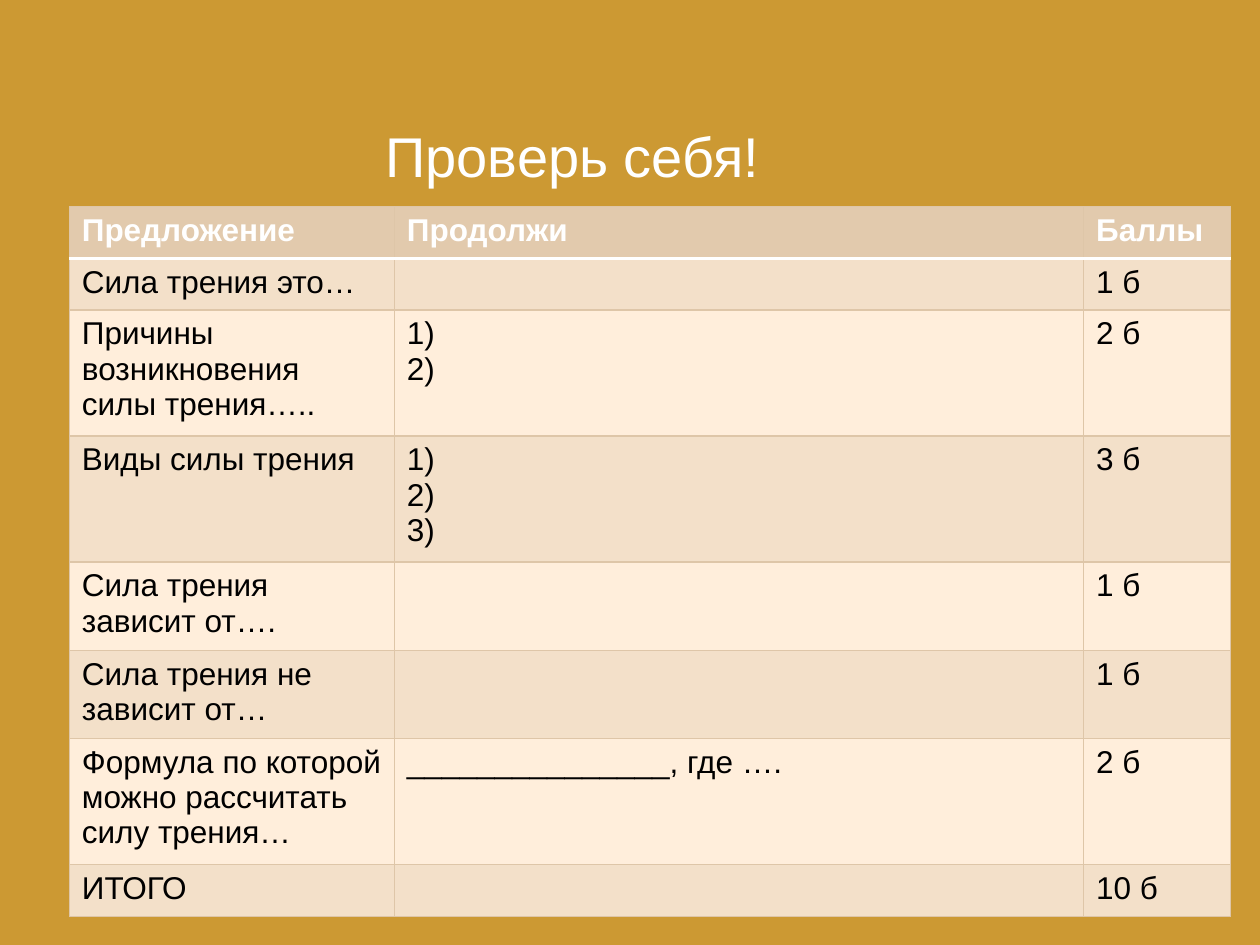
from dataclasses import dataclass

from lxml.etree import SubElement
from pptx import Presentation
from pptx.dml.color import RGBColor
from pptx.enum.text import MSO_ANCHOR
from pptx.oxml.ns import qn
from pptx.util import Inches, Pt

GOLD = RGBColor(0xCC, 0x99, 0x33)
WHITE = RGBColor(0xFF, 0xFF, 0xFF)
BLACK = RGBColor(0x00, 0x00, 0x00)
HEADER_TAN = RGBColor(0xE2, 0xCA, 0xAD)
BAND_TAN = RGBColor(0xF3, 0xE0, 0xC9)
CREAM = RGBColor(0xFF, 0xEE, 0xDB)
GRID_TAN = RGBColor(0xDE, 0xC6, 0xA8)
FONT = "Arial"
COLUMN_WIDTHS = (2.58, 5.47, 1.17)
ROW_HEIGHT = 0.41


@dataclass(frozen=True)
class Question:
    prompt: str
    answer: str
    points: str


HEADER = Question("Предложение", "Продолжи", "Баллы")
QUESTIONS = (
    Question("Сила трения это…", "", "1 б"),
    Question("Причины возникновения силы трения…..", "1)\n2)", "2 б"),
    Question("Виды силы трения", "1)\n2)\n3)", "3 б"),
    Question("Сила трения зависит от….", "", "1 б"),
    Question("Сила трения не зависит от…", "", "1 б"),
    Question("Формула по которой можно рассчитать силу трения…",
             "_______________, где ….", "2 б"),
    Question("ИТОГО", "", "10 б"),
)


def set_font(para, size: int, color: RGBColor, bold: bool = False) -> None:
    para.font.name = FONT
    para.font.size = Pt(size)
    para.font.bold = bold
    para.font.color.rgb = color


def add_border(cell, side: str, color: RGBColor, width: float) -> None:
    line = SubElement(cell._tc.get_or_add_tcPr(), qn(f"a:ln{side}"), w=str(Pt(width)))
    SubElement(SubElement(line, qn("a:solidFill")), qn("a:srgbClr"), val=str(color))


def fill_row(table, index: int, question: Question) -> None:
    is_header = index == 0
    fill = HEADER_TAN if is_header else BAND_TAN if index % 2 else CREAM
    white_side = {0: "B", 1: "T"}.get(index)
    texts = (question.prompt, question.answer, question.points)
    for column, text in enumerate(texts):
        cell = table.cell(index, column)
        for side in "LRTB":
            is_white = side == white_side
            add_border(cell, side, WHITE if is_white else GRID_TAN, 2 if is_white else 0.75)
        cell.fill.solid()
        cell.fill.fore_color.rgb = fill
        cell.text = text
        for para in cell.text_frame.paragraphs:
            set_font(para, 18, WHITE if is_header else BLACK, is_header)


def add_title(page, text: str) -> None:
    box = page.shapes.add_textbox(Inches(2.96), Inches(0.3), Inches(6.91), Inches(1.25))
    frame = box.text_frame
    frame.word_wrap = True
    frame.vertical_anchor = MSO_ANCHOR.BOTTOM
    frame.text = text
    set_font(frame.paragraphs[0], 32, WHITE)


def add_quiz(page) -> None:
    rows = (HEADER, *QUESTIONS)
    table = page.shapes.add_table(
        len(rows), len(COLUMN_WIDTHS), Inches(0.55), Inches(1.64),
        Inches(sum(COLUMN_WIDTHS)), Inches(ROW_HEIGHT * len(rows))).table
    for column, width in zip(table.columns, COLUMN_WIDTHS):
        column.width = Inches(width)
    for index, question in enumerate(rows):
        table.rows[index].height = Inches(ROW_HEIGHT)
        fill_row(table, index, question)


def main() -> None:
    """Build the friction self-check slide."""
    deck = Presentation()
    deck.slide_width, deck.slide_height = Inches(10), Inches(7.5)
    page = deck.slides.add_slide(deck.slide_layouts[6])
    page.background.fill.solid()
    page.background.fill.fore_color.rgb = GOLD
    add_title(page, "Проверь себя!")
    add_quiz(page)
    deck.save("out.pptx")


if __name__ == "__main__":
    main()
